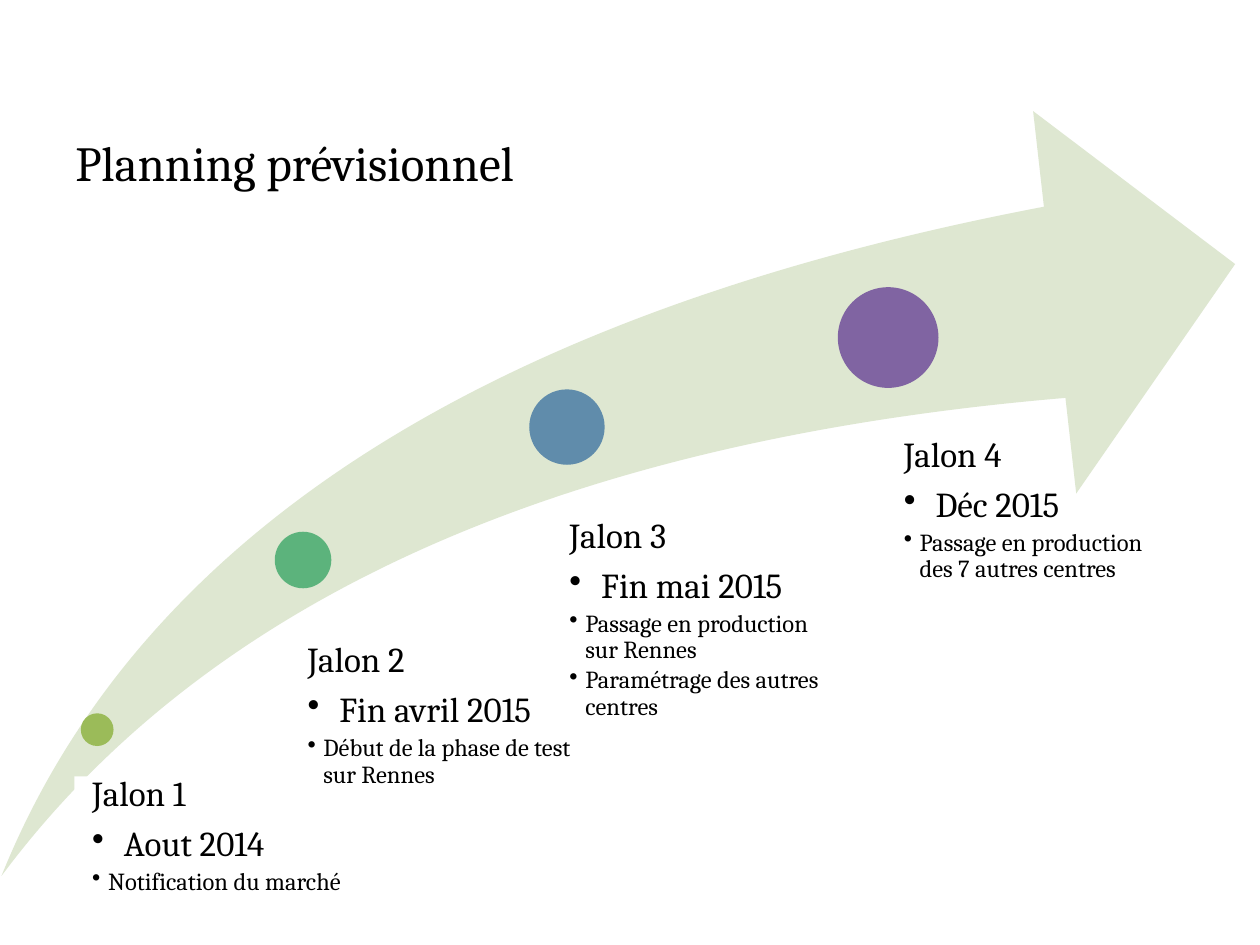
from lxml.etree import SubElement
from pptx import Presentation
from pptx.dml.color import RGBColor
from pptx.enum.shapes import MSO_SHAPE
from pptx.enum.text import MSO_ANCHOR
from pptx.oxml.ns import qn
from pptx.util import Cm, Pt

BLACK = RGBColor(0x00, 0x00, 0x00)
WHITE = RGBColor(0xFF, 0xFF, 0xFF)
SAGE = RGBColor(0xDE, 0xE7, 0xD1)
LIME = RGBColor(0x9B, 0xBB, 0x59)
GREEN = RGBColor(0x5C, 0xB3, 0x7C)
BLUE = RGBColor(0x60, 0x8C, 0xAB)
PURPLE = RGBColor(0x80, 0x64, 0xA2)

STONES = [
    ((1.63, 14.38, 0.66), LIME, (1.5, 15.65, 5.92, 4.27), 0.36,
     "Jalon 1", "Aout 2014", ["Notification du marché"]),
    ((5.54, 10.72, 1.14), GREEN, (5.59, 12.95, 6.02, 6.68), 0.61,
     "Jalon 2", "Fin avril 2015", ["Début de la phase de test sur Rennes"]),
    ((10.67, 7.85, 1.52), BLUE, (10.67, 10.44, 6.02, 6.73), 0.81,
     "Jalon 3", "Fin mai 2015",
     ["Passage en production sur Rennes", "Paramétrage des autres centres"]),
    ((16.89, 5.79, 2.03), PURPLE, (17.15, 8.81, 6.02, 8.28), 1.07,
     "Jalon 4", "Déc 2015", ["Passage en production des 7 autres centres"]),
]


def write(para, text, size=20, after=0, line=None, indent=0):
    if indent:
        para.level = 1
        props = para._p.get_or_add_pPr()
        props.set("marL", str(Cm(indent)))
        props.set("indent", str(-Cm(indent)))
        SubElement(props, qn("a:buChar")).set("char", "•")
    para.space_after = Pt(after)
    para.line_spacing = line
    run = para.add_run()
    run.text = text
    run.font.name = "Cambria"
    run.font.size = Pt(size)
    run.font.color.rgb = BLACK


class Deck:
    def __init__(self):
        self.show = Presentation()
        self.show.slide_width = Cm(25.4)
        self.show.slide_height = Cm(19.05)
        self.slide = self.show.slides.add_slide(self.show.slide_layouts[6])

    def shape(self, kind, spot, fill):
        form = self.slide.shapes.add_shape(kind, *map(Cm, spot))
        form.shadow.inherit = False
        form.fill.solid()
        form.fill.fore_color.rgb = fill
        form.line.fill.background()
        return form

    def arrow(self, spot, fill):
        form = self.shape(MSO_SHAPE.SWOOSH_ARROW, spot, fill)
        form.adjustments[0] = form.adjustments[1] = 0.25

    def dot(self, left, top, size, fill):
        self.shape(MSO_SHAPE.OVAL, (left, top, size, size), fill)

    def text(self, spot, left=0, top=0):
        frame = self.slide.shapes.add_textbox(*map(Cm, spot)).text_frame
        frame.word_wrap = True
        frame.vertical_anchor = MSO_ANCHOR.TOP
        frame.margin_left, frame.margin_top = Cm(left), Cm(top)
        frame.margin_right = frame.margin_bottom = 0
        return frame

    def stone(self, spot, inset, name, date, notes):
        frame = self.text(spot, inset)
        write(frame.paragraphs[0], name, after=7, line=0.9)
        write(frame.add_paragraph(), date, after=3, line=0.9, indent=0.64)
        for note in notes:
            write(frame.add_paragraph(), note, size=14, after=2, line=0.9,
                  indent=0.32)


def main():
    deck = Deck()
    deck.arrow((0.03, 2.24, 24.87, 15.42), SAGE)
    deck.shape(MSO_SHAPE.RECTANGLE, STONES[0][2], WHITE)
    for dot, fill, spot, inset, name, date, notes in STONES:
        deck.dot(*dot, fill)
        deck.stone(spot, inset, name, date, notes)
    title = deck.text((1.27, 2.54, 22.86, 2.54), 0.25, 0.13)
    write(title.paragraphs[0], "Planning prévisionnel", size=28)
    deck.show.save("out.pptx")


if __name__ == "__main__":
    main()
